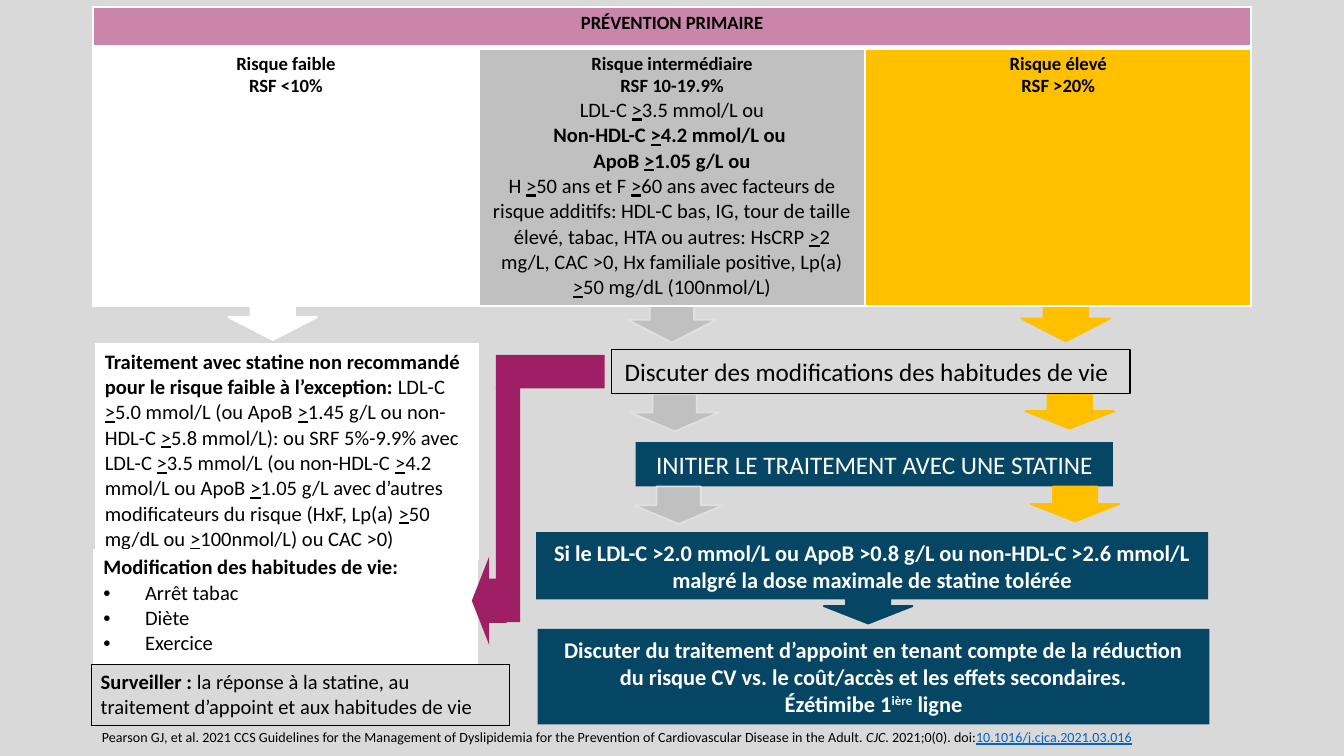
import pptx
import pptx.util
import pptx.dml.color
import pptx.enum.shapes
import pptx.enum.text
import lxml.etree

COLORS = {
    "page": "D9D9D9", "white": "FFFFFF", "black": "000000", "rose": "CA86AA",
    "grey": "C0C0C0", "pale": "E0E0E0", "gold": "FFC000", "navy": "064665",
    "plum": "9E1F63", "link": "0563C1",
}
RGB = {k: pptx.dml.color.RGBColor.from_string(v) for k, v in COLORS.items()}
LEFT = pptx.enum.text.PP_ALIGN.LEFT
CENTER = pptx.enum.text.PP_ALIGN.CENTER
RECT = pptx.enum.shapes.MSO_SHAPE.RECTANGLE
ARROW = pptx.enum.shapes.MSO_SHAPE.DOWN_ARROW

prs = pptx.Presentation()
prs.slide_width = pptx.util.Inches(10)
prs.slide_height = prs.slide_width * 9 // 16
COL = ROW = prs.slide_width / 10   # square grid, 10 columns wide
s = prs.slides.add_slide(prs.slide_layouts[6])
s.background.fill.solid()
s.background.fill.fore_color.rgb = RGB["page"]


def write(tf, text, size=11, color="black", align=LEFT, bullet=False):
    """Append lines; * toggles bold, _ underline, ~ italic, ^ superscript, @ link look."""
    on = dict.fromkeys("*_~^@", False)
    for line in text.split("\n"):
        p = tf.add_paragraph() if tf.text else tf.paragraphs[0]
        p.alignment = align
        if bullet:
            pPr = p._p.get_or_add_pPr()
            pPr.set("marL", str(int(0.31 * COL)))
            pPr.set("indent", str(int(-0.31 * COL)))
            for tag, key, value in (("buFont", "typeface", "Arial"), ("buChar", "char", "•")):
                lxml.etree.SubElement(pPr, pptx.oxml.ns.qn(f"a:{tag}")).set(key, value)
        pieces = [line]
        for mark in on:
            pieces = [part for piece in pieces
                      for part in piece.replace(mark, f"\n{mark}\n").split("\n")]
        for piece in filter(None, pieces):
            if piece in on:
                on[piece] = not on[piece]
                continue
            r = p.add_run()
            r.text = piece
            r.font.name, r.font.size = "Calibri", pptx.util.Pt(size)
            r.font.bold, r.font.italic = on["*"], on["~"]
            r.font.underline = on["_"] or on["@"]
            r.font.color.rgb = RGB["link" if on["@"] else color]
            if on["^"]:
                r._r.get_or_add_rPr().set("baseline", "30000")


def add_grid(left, top, widths, heights, fills, border="white", edges=((1, 3),)):
    """Add a table; edges holds the top and bottom border width of each row."""
    side = min(edges[0])
    frame = s.shapes.add_table(len(heights), len(widths), int(left * COL), int(top * ROW),
                               int(sum(widths) * COL), int(sum(heights) * ROW))
    table = frame.table
    table.first_row = table.horz_banding = False
    for column, width in zip(table.columns, widths):
        column.width = int(width * COL)
    for row, height, row_fills, (above, below) in zip(table.rows, heights, fills, edges):
        row.height = int(height * ROW)
        for cell, fill in zip(row.cells, row_fills):
            cell.margin_left = cell.margin_right = int(0.07 * COL)
            cell.margin_top = cell.margin_bottom = int(0.04 * ROW)
            tcPr = cell._tc.get_or_add_tcPr()
            for tag, pt in (("lnL", side), ("lnR", side), ("lnT", above), ("lnB", below)):
                ln = lxml.etree.SubElement(tcPr, pptx.oxml.ns.qn(f"a:{tag}"))
                ln.set("w", str(int(pptx.util.Pt(pt))))
                solid = lxml.etree.SubElement(ln, pptx.oxml.ns.qn("a:solidFill"))
                lxml.etree.SubElement(solid, pptx.oxml.ns.qn("a:srgbClr")).set(
                    "val", COLORS[border])
            if fill:
                cell.fill.solid()
                cell.fill.fore_color.rgb = RGB[fill]
            else:
                cell.fill.background()
    return table


# Shapes, back to front: kind, left, top, width, height, fill, line, line width, rotation, text
under_tables = [
    (ARROW, 6.13, 4.38, 0.66, 0.26, "navy", "navy", 1, 0, None),
    (ARROW, 1.7, 2.19, 0.66, 0.34, "white", "white", 1, 0, None),
    (ARROW, 4.67, 2.21, 0.66, 0.34, "grey", "pale", 1, 0, None),
    (ARROW, 7.6, 2.2, 0.66, 0.34, "gold", "gold", 1, 0, None),
]
over_tables = [
    (RECT, 4.73, 3.29, 3.55, 0.33, "navy", None, 0, 0,
     ("INITIER LE TRAITEMENT AVEC UNE STATINE", 13.5, "white", CENTER)),
]
for top, grey_left, gold_left in ((2.93, 4.69, 7.63), (3.62, 4.72, 7.67)):
    over_tables += [
        (ARROW, grey_left, top, 0.66, 0.28, "grey", "pale", 1, 0, None),
        (ARROW, gold_left, top, 0.66, 0.26, "gold", "gold", 1, 0, None),
    ]
over_tables += [
    (RECT, 3.99, 3.96, 5, 0.5, "navy", None, 0, 0,
     ("*Si le LDL-C >2.0 mmol/L ou ApoB >0.8 g/L ou non-HDL-C >2.6 mmol/L "
      "malgré la dose maximale de statine tolérée", 12, "white", CENTER)),
    (RECT, 4, 4.68, 5, 0.71, "navy", None, 0, 0,
     ("*Discuter du traitement d’appoint en tenant compte de la réduction du risque CV "
      "vs. le coût/accès et les effets secondaires.\nÉzétimibe 1^ière^ ligne",
      12, "white", CENTER)),
    (RECT, 3.69, 2.64, 0.81, 0.25, "plum", None, 0, 0, None),
    (RECT, 3.69, 2.88, 0.18, 1.75, "plum", None, 0, 0, None),
    (ARROW, 3.31, 4.34, 0.66, 0.26, "plum", None, 0, 90, None),
    (RECT, 4.55, 2.6, 3.86, 0.33, None, "black", 0.75, 0,
     ("Discuter des modifications des habitudes de vie", 13.5, "black", LEFT)),
]

for layer in (under_tables, over_tables):
    for kind, left, top, width, height, fill, line, line_width, rotation, text in layer:
        sp = s.shapes.add_shape(kind, int(left * COL), int(top * ROW),
                                int(width * COL), int(height * ROW))
        sp.shadow.inherit = False
        sp.rotation = rotation
        if fill:
            sp.fill.solid()
            sp.fill.fore_color.rgb = RGB[fill]
        else:
            sp.fill.background()
        if line:
            sp.line.color.rgb = RGB[line]
            sp.line.width = pptx.util.Pt(line_width)
        else:
            sp.line.fill.background()
        if text:
            words, size, color, align = text
            sp.text_frame.word_wrap = fill is not None
            sp.text_frame.auto_size = pptx.enum.text.MSO_AUTO_SIZE.SHAPE_TO_FIT_TEXT
            write(sp.text_frame, words, size=size, color=color, align=align)

    if layer is under_tables:
        risks = add_grid(0.69, 0.05, [8.62 / 3] * 3, [0.3, 1.9],
                         [["rose"] * 3, ["white", "grey", "gold"]], edges=((1, 3), (3, 1)))
        risks.cell(0, 0).merge(risks.cell(0, 2))
        write(risks.cell(0, 0).text_frame, "*PRÉVENTION PRIMAIRE", size=10, align=CENTER)
        for i, label in enumerate(("Risque faible\nRSF <10%",
                                   "Risque intermédiaire\nRSF 10-19.9%",
                                   "Risque élevé\nRSF >20%")):
            write(risks.cell(1, i).text_frame, "*" + label, size=10, align=CENTER)
        write(risks.cell(1, 1).text_frame,
              "LDL-C _>_3.5 mmol/L ou\n*Non-HDL-C _>_4.2 mmol/L ou \nApoB _>_1.05 g/L ou*\n"
              "H _>_50 ans et F _>_60 ans avec facteurs de risque additifs: HDL-C bas, IG, "
              "tour de taille élevé, tabac, HTA ou autres: HsCRP _>_2 mg/L, CAC >0, "
              "Hx familiale positive, Lp(a) _>_50 mg/dL (100nmol/L)", align=CENTER)

        statin = add_grid(0.71, 2.56, [2.85], [1.57], [["white"]])
        write(statin.cell(0, 0).text_frame,
              "*Traitement avec statine non recommandé pour le risque faible à l’exception:* "
              "LDL-C _>_5.0 mmol/L (ou ApoB _>_1.45 g/L ou non-HDL-C _>_5.8 mmol/L): ou SRF "
              "5%-9.9% avec LDL-C _>_3.5 mmol/L (ou non-HDL-C _>_4.2 mmol/L ou ApoB _>_1.05 "
              "g/L avec d’autres modificateurs du risque (HxF, Lp(a) _>_50 mg/dL ou "
              "_>_100nmol/L) ou CAC >0)")

        habits = add_grid(0.7, 4.09, [2.85], [0.82], [["white"]]).cell(0, 0).text_frame
        write(habits, "*Modification des habitudes de vie:")
        write(habits, "Arrêt tabac\nDiète\nExercice", bullet=True)

        follow_up = add_grid(0.68, 4.94, [3.11], [0.45], [[None]],
                             border="black", edges=((0.5, 0.5),))
        write(follow_up.cell(0, 0).text_frame,
              "*Surveiller : *la réponse à la statine, au traitement d’appoint "
              "et aux habitudes de vie")

citation = s.shapes.add_textbox(int(0.66 * COL), int(5.37 * ROW),
                                int(8.32 * COL), int(0.35 * ROW)).text_frame
citation.word_wrap = True
write(citation,
      "Pearson GJ, et al. 2021 CCS Guidelines for the Management of Dyslipidemia for the "
      "Prevention of Cardiovascular Disease in the Adult. ~CJC~. 2021;0(0). "
      "doi:@10.1016/j.cjca.2021.03.016@", size=7.5)

prs.save("out.pptx")
